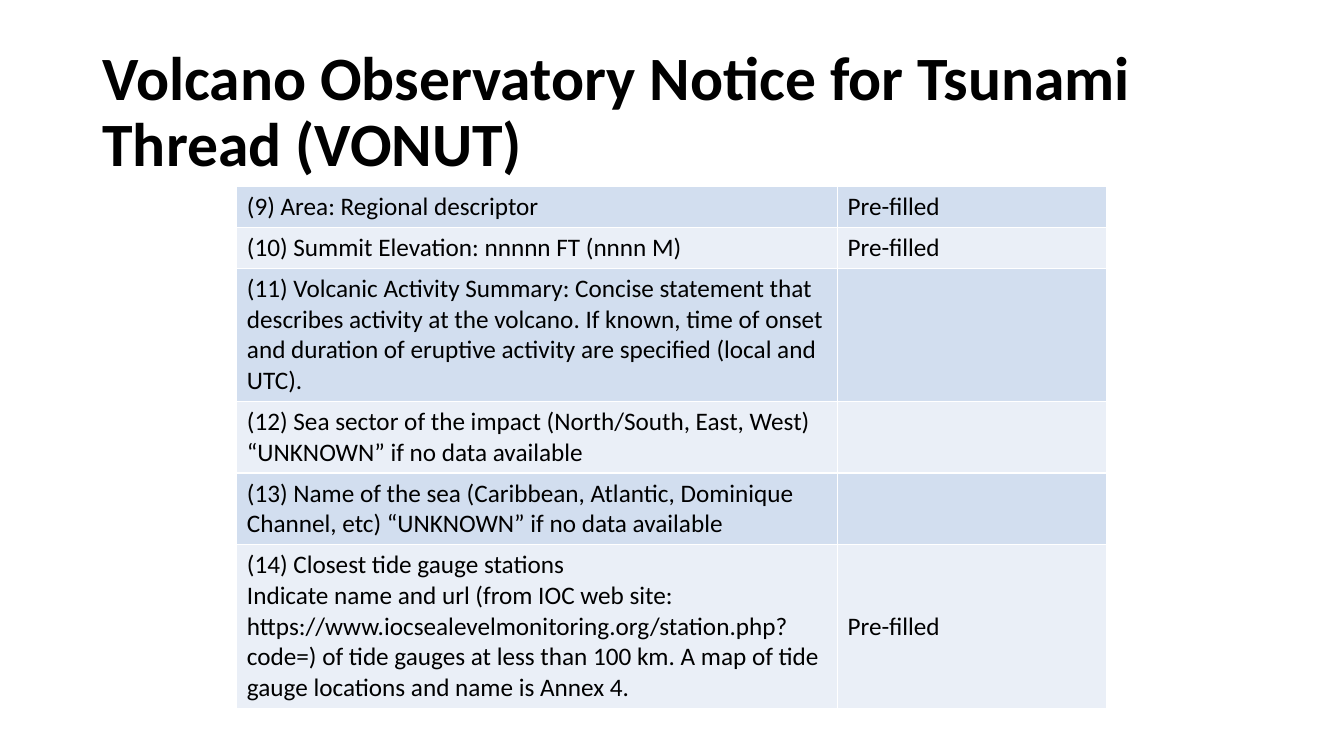
import pptx
import pptx.util
import pptx.dml.color
import pptx.enum.text
import pptx.oxml
import pptx.oxml.ns

BLACK = pptx.dml.color.RGBColor(0x00, 0x00, 0x00)
WHITE = pptx.dml.color.RGBColor(0xFF, 0xFF, 0xFF)
BAND_DARK = pptx.dml.color.RGBColor(0xD2, 0xDE, 0xEF)
BAND_LIGHT = pptx.dml.color.RGBColor(0xEA, 0xEF, 0xF7)
FONT = "Calibri"
TOP = pptx.enum.text.MSO_ANCHOR.TOP
MIDDLE = pptx.enum.text.MSO_ANCHOR.MIDDLE

deck = pptx.Presentation()
deck.slide_width = pptx.util.Inches(13.33)
deck.slide_height = pptx.util.Inches(7.5)
COLUMN = deck.slide_width / 160
ROW = deck.slide_height / 150


def add_run(paragraph, text, size, bold=False):
    run = paragraph.add_run()
    run.text = text
    run.font.name = FONT
    run.font.size = pptx.util.Pt(size)
    run.font.bold = bold
    run.font.color.rgb = BLACK


def add_borders(cell, color, width):
    for index, side in enumerate(("lnL", "lnR", "lnT", "lnB")):
        border = pptx.oxml.parse_xml(
            f'<a:{side} {pptx.oxml.ns.nsdecls("a")} w="{width}">'
            f'<a:solidFill><a:srgbClr val="{color}"/></a:solidFill></a:{side}>'
        )
        cell._tc.get_or_add_tcPr().insert(index, border)


slide = deck.slides.add_slide(deck.slide_layouts[5])
slide.background.fill.solid()
slide.background.fill.fore_color.rgb = WHITE

heading = slide.shapes.title
heading.left, heading.width = int(11 * COLUMN), int(138 * COLUMN)
heading.top, heading.height = int(8 * ROW), int(29 * ROW)
heading.text_frame.word_wrap = True
heading.text_frame.auto_size = pptx.enum.text.MSO_AUTO_SIZE.NONE
heading.text_frame.vertical_anchor = MIDDLE
heading_line = heading.text_frame.paragraphs[0]
heading_line.alignment = pptx.enum.text.PP_ALIGN.LEFT
heading_line.line_spacing = 0.9
add_run(heading_line, "Volcano Observatory Notice for Tsunami Thread (VONUT)", 44, True)

notice_fields = [
    (["(9) Area: Regional descriptor"], "Pre-filled", TOP),
    (["(10) Summit Elevation: nnnnn FT (nnnn M)"], "Pre-filled", MIDDLE),
    (["(11) Volcanic Activity Summary: Concise statement that",
      "describes activity at the volcano. If known, time of onset and duration "
      "of eruptive activity are specified (local and UTC)."], "", TOP),
    (["(12) Sea sector of the impact (North/South, East, West)",
      "“UNKNOWN” if no data available"], "", TOP),
    (["(13) Name of the sea (Caribbean, Atlantic, Dominique Channel, etc) "
      "“UNKNOWN” if no data available"], "", TOP),
    (["(14) Closest tide gauge stations",
      "Indicate name and url (from IOC web site: "
      "https://www.iocsealevelmonitoring.org/station.php?code=) of tide gauges "
      "at less than 100 km. A map of tide gauge locations and name is Annex 4."],
     "Pre-filled", MIDDLE),
]

field_widths = (71.5, 32)
row_height = 7.2
notice = slide.shapes.add_table(
    len(notice_fields), len(field_widths),
    int(28.2 * COLUMN), int(37 * ROW),
    int(sum(field_widths) * COLUMN), int(row_height * len(notice_fields) * ROW),
).table
notice.first_row = False
for notice_column, width in zip(notice.columns, field_widths):
    notice_column.width = int(width * COLUMN)

for index, (description, status, status_anchor) in enumerate(notice_fields):
    notice.rows[index].height = int(row_height * ROW)
    contents = ((description, TOP), ([status], status_anchor))
    for cell, (lines, anchor) in zip(notice.rows[index].cells, contents):
        cell.fill.solid()
        cell.fill.fore_color.rgb = BAND_LIGHT if index % 2 else BAND_DARK
        cell.vertical_anchor = anchor
        add_borders(cell, WHITE, pptx.util.Pt(1))
        for number, line in enumerate(lines):
            frame = cell.text_frame
            paragraph = frame.add_paragraph() if number else frame.paragraphs[0]
            if line:
                add_run(paragraph, line, 18)

deck.save("out.pptx")
